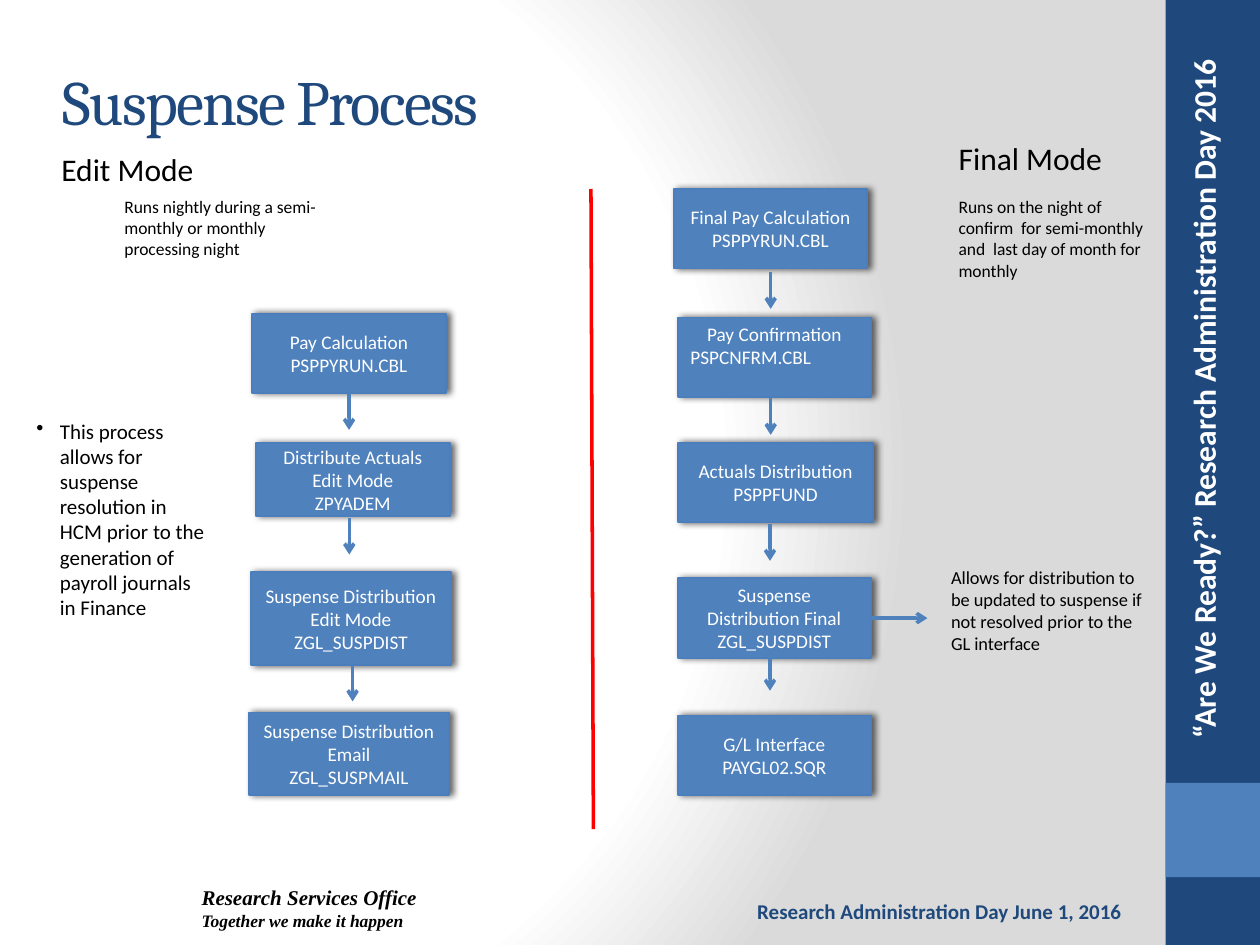
from dataclasses import dataclass

import lxml.etree
import pptx
import pptx.dml.color
import pptx.enum.shapes
import pptx.enum.text
import pptx.oxml
import pptx.oxml.ns
import pptx.util

Pt = pptx.util.Pt
Align = pptx.enum.text.PP_ALIGN
Anchor = pptx.enum.text.MSO_ANCHOR


@dataclass(frozen=True)
class TextStyle:
    size: float
    color: str = "000000"
    font: str = "Calibri"
    bold: bool = False
    italic: bool = False


@dataclass(frozen=True)
class Theme:
    navy: str = "1F497D"
    blue: str = "4F81BD"
    outline: str = "4B7EBC"
    divider: str = "FF0000"
    title: TextStyle = TextStyle(36, "1F497D", "Cambria")
    banner: TextStyle = TextStyle(18, "FFFFFF", bold=True)
    heading: TextStyle = TextStyle(18)
    step: TextStyle = TextStyle(11, "FFFFFF")
    bullet: TextStyle = TextStyle(12)
    note: TextStyle = TextStyle(10)
    side_note: TextStyle = TextStyle(10.5)
    office: TextStyle = TextStyle(12, font="Times New Roman", bold=True, italic=True)
    motto: TextStyle = TextStyle(10, font="Times New Roman", bold=True, italic=True)
    event: TextStyle = TextStyle(12, "1F497D", bold=True)


@dataclass(frozen=True)
class Line:
    text: str
    style: TextStyle
    align: Align = Align.LEFT


@dataclass(frozen=True)
class Box:
    left: float
    top: float
    width: float
    height: float


@dataclass(frozen=True)
class Step:
    box: Box
    texts: tuple[str, ...]
    last_align: Align = Align.CENTER
    bottom_inset: float = 3.6


@dataclass(frozen=True)
class Arrow:
    start: tuple[float, float]
    end: tuple[float, float]


THEME = Theme()
ARROW_LENGTH = 21

PAY_CALCULATION = Step(Box(144, 179.3, 110.9, 45.4), ("Pay Calculation", "PSPPYRUN.CBL"))
SUSPENSE_FINAL = Step(Box(387.4, 330.5, 110.2, 45.4),
                      ("Suspense Distribution Final", "ZGL_SUSPDIST"))
STEPS = (
    PAY_CALCULATION,
    Step(Box(146.2, 253.1, 110.9, 41.8), ("Distribute Actuals Edit Mode", "ZPYADEM")),
    Step(Box(143.3, 326.9, 114.5, 53.3), ("Suspense Distribution Edit Mode", "ZGL_SUSPDIST")),
    Step(Box(142.2, 407.2, 114.5, 47.2), ("Suspense Distribution Email", "ZGL_SUSPMAIL")),
    Step(Box(385.2, 108, 110.2, 45.4), ("Final Pay Calculation PSPPYRUN.CBL",)),
    Step(Box(387.4, 181.4, 110.2, 45.4), ("Pay Confirmation", "PSPCNFRM.CBL"), Align.LEFT, 17),
    Step(Box(387.4, 253.1, 111.6, 45.4), ("Actuals Distribution", "PSPPFUND")),
    SUSPENSE_FINAL,
    Step(Box(387.4, 408.9, 110.2, 45.4), ("G/L Interface", "PAYGL02.SQR")),
)

FREE_ARROW_STARTS = ((199.6, 295.9), (201.5, 379.8), (440.4, 155.5),
                     (440.4, 227.5), (440, 299.5), (440, 373.7))

LABELS = (
    (Box(28, 82, 200, 29), (Line("Edit Mode", THEME.heading),)),
    (Box(540.7, 75.6, 115, 29), (Line("Final Mode", THEME.heading),)),
    (Box(64, 108.7, 124, 44), (
        Line("Runs nightly during a semi-monthly or monthly processing night", THEME.note),)),
    (Box(540.7, 108.7, 124, 55.5), (
        Line("Runs on the night of confirm  for semi-monthly and  last day of month for monthly",
             THEME.note),)),
    (Box(536.4, 319.7, 124, 70.6), (
        Line("Allows for distribution to be updated to suspense if not resolved prior to "
             "the GL interface", THEME.side_note),)),
    (Box(408.2, 509.8, 239.8, 21.8), (
        Line("Research Administration Day June 1, 2016", THEME.event, Align.RIGHT),)),
)


def rgb(color: str) -> pptx.dml.color.RGBColor:
    return pptx.dml.color.RGBColor.from_string(color)


def add_element(parent, tag: str, **attributes: str):
    element = lxml.etree.SubElement(parent, pptx.oxml.ns.qn(tag))
    for name, value in attributes.items():
        element.set(name, value)
    return element


def paint_background(slide) -> None:
    fill = slide.background.fill
    fill.gradient()
    gradient = slide.background._cSld.find(".//" + pptx.oxml.ns.qn("a:gradFill"))
    for child in list(gradient):
        gradient.remove(child)
    stops = add_element(gradient, "a:gsLst")
    for position, color in ((0, "FFFFFF"), (75, "FFFFFF"), (100, "DADADA")):
        stop = add_element(stops, "a:gs", pos=str(position * 1000))
        add_element(stop, "a:srgbClr", val=color)
    path = add_element(gradient, "a:path", path="circle")
    add_element(path, "a:fillToRect", l="20000", t="50000", r="100000", b="50000")


def write_lines(frame, lines: tuple[Line, ...]) -> None:
    frame.word_wrap = True
    for index, line in enumerate(lines):
        paragraph = frame.paragraphs[0] if index == 0 else frame.add_paragraph()
        paragraph.text = line.text
        paragraph.alignment = line.align
        font = paragraph.font
        font.name, font.size = line.style.font, Pt(line.style.size)
        font.bold, font.italic = line.style.bold, line.style.italic
        font.color.rgb = rgb(line.style.color)


def add_label(slide, box: Box, lines: tuple[Line, ...]):
    shape = slide.shapes.add_textbox(Pt(box.left), Pt(box.top), Pt(box.width), Pt(box.height))
    write_lines(shape.text_frame, lines)
    return shape


def add_rectangle(slide, box: Box, color: str):
    shape = slide.shapes.add_shape(pptx.enum.shapes.MSO_SHAPE.RECTANGLE, Pt(box.left),
                                   Pt(box.top), Pt(box.width), Pt(box.height))
    shape.shadow.inherit = False
    shape.fill.solid()
    shape.fill.fore_color.rgb = rgb(color)
    shape.line.fill.background()
    return shape


def add_step(slide, step: Step):
    shape = add_rectangle(slide, step.box, THEME.blue)
    shape.line.color.rgb = rgb(THEME.outline)
    shape.line.width = Pt(1)
    effects = shape._element.spPr.find(pptx.oxml.ns.qn("a:effectLst"))
    shadow = add_element(effects, "a:outerShdw", blurRad=str(Pt(4)), dist=str(Pt(2)),
                         dir="0", rotWithShape="0")
    color = add_element(shadow, "a:srgbClr", val="000000")
    add_element(color, "a:alpha", val="60000")
    aligns = [Align.CENTER] * (len(step.texts) - 1) + [step.last_align]
    frame = shape.text_frame
    frame.vertical_anchor = Anchor.MIDDLE
    frame.margin_bottom = Pt(step.bottom_inset)
    write_lines(frame, tuple(Line(text, THEME.step, align)
                             for text, align in zip(step.texts, aligns)))
    return shape


def add_line(slide, line: Arrow, color: str, arrowhead: bool = True):
    connector = slide.shapes.add_connector(
        pptx.enum.shapes.MSO_CONNECTOR.STRAIGHT, *map(Pt, line.start + line.end))
    connector.line.color.rgb = rgb(color)
    connector.line.width = Pt(2)
    if arrowhead:
        add_element(connector.line._get_or_add_ln(), "a:tailEnd", type="arrow")
    add_element(connector._element.spPr, "a:effectLst")
    return connector


def main() -> None:
    presentation = pptx.Presentation()
    presentation.slide_width, presentation.slide_height = Pt(720), Pt(540)
    slide = presentation.slides.add_slide(presentation.slide_layouts[6])
    paint_background(slide)

    add_rectangle(slide, Box(666, 0, 54, 540), THEME.navy)
    add_rectangle(slide, Box(666, 447.3, 54, 54), THEME.blue)
    banner = add_label(slide, Box(673.2, 18, 36, 420), (
        Line("“Are We Ready?” Research Administration Day 2016", THEME.banner, Align.CENTER),))
    banner.text_frame._txBody.bodyPr.set("vert", "vert270")

    title = add_label(slide, Box(28.8, 18, 619.2, 79.2), (Line("Suspense Process", THEME.title),))
    title.text_frame.vertical_anchor = Anchor.MIDDLE
    title.text_frame.paragraphs[0].runs[0]._r.get_or_add_rPr().set("spc", "-100")

    office = add_label(slide, Box(115.2, 505.4, 139.7, 28.8), (
        Line("Research Services Office", THEME.office),
        Line("Together we make it happen", THEME.motto)))
    frame = office.text_frame
    frame.margin_left = frame.margin_top = frame.margin_right = frame.margin_bottom = 0

    for box, lines in LABELS:
        add_label(slide, box, lines)

    process = slide.shapes.add_textbox(Pt(13.7), Pt(235.4), Pt(112.3), Pt(138.2))
    properties = process.text_frame.paragraphs[0]._p.get_or_add_pPr()
    properties.set("marL", str(Pt(13.5)))
    properties.set("indent", str(Pt(-13.5)))
    add_element(properties, "a:buChar", char="•")
    write_lines(process.text_frame, (
        Line("This process allows for suspense resolution in HCM prior to the generation of "
             "payroll journals in Finance", THEME.bullet),))

    shapes = {step: add_step(slide, step) for step in STEPS}
    add_line(slide, Arrow((337.7, 108), (339.1, 473.8)), THEME.divider, arrowhead=False)
    for left, top in FREE_ARROW_STARTS:
        add_line(slide, Arrow((left, top), (left, top + ARROW_LENGTH)), THEME.blue)
    pay_arrow = add_line(slide, Arrow((199.45, 224.7), (199.45, 245.7)), THEME.blue)
    pay_arrow.begin_connect(shapes[PAY_CALCULATION], 2)
    note_arrow = add_line(slide, Arrow((497.6, 353.2), (530, 353.2)), THEME.blue)
    note_arrow.begin_connect(shapes[SUSPENSE_FINAL], 3)

    presentation.save("out.pptx")


if __name__ == "__main__":
    main()
